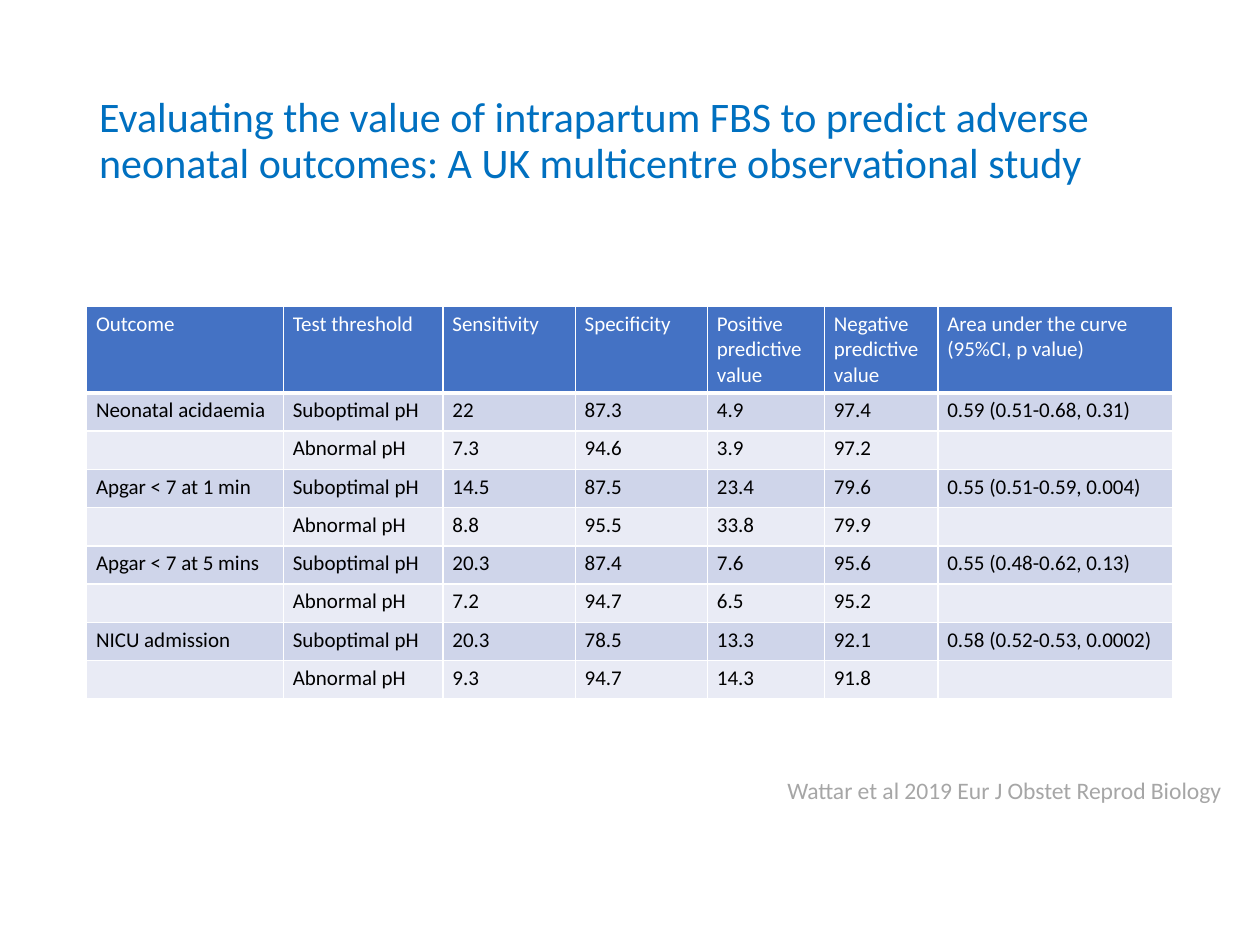
from lxml.etree import SubElement
from pptx import Presentation
from pptx.dml.color import RGBColor
from pptx.enum.text import MSO_ANCHOR, MSO_AUTO_SIZE
from pptx.oxml.ns import qn
from pptx.util import Pt

THEME = {
    "font": "Calibri",
    "title_size": 24, "table_size": 12, "citation_size": 13.5,
    "title": "0070C0", "citation": "A6A6A6",
    "header_text": "FFFFFF", "body_text": "000000",
    "header_fill": "4472C4", "band_fills": ("CFD5EA", "E9EBF5"),
    "border": "FFFFFF",
}

TITLE = ("Evaluating the value of intrapartum FBS to predict adverse "
         "neonatal outcomes: A UK multicentre observational study")
CITATION = "Wattar et al 2019 Eur J Obstet Reprod Biology"
COLUMNS = [
    ("Outcome", 112.5), ("Test threshold", 91.2), ("Sensitivity", 75.6),
    ("Specificity", 75.6), ("Positive predictive value", 66.8),
    ("Negative predictive value", 64.9),
    ("Area under the curve (95%CI, p value)", 134.2),
]
THRESHOLDS = ("Suboptimal pH", "Abnormal pH")
OUTCOMES = [
    ("Neonatal acidaemia", "0.59 (0.51-0.68, 0.31)",
     [("22", "87.3", "4.9", "97.4"), ("7.3", "94.6", "3.9", "97.2")]),
    ("Apgar < 7 at 1 min", "0.55 (0.51-0.59, 0.004)",
     [("14.5", "87.5", "23.4", "79.6"), ("8.8", "95.5", "33.8", "79.9")]),
    ("Apgar < 7 at 5 mins", "0.55 (0.48-0.62, 0.13)",
     [("20.3", "87.4", "7.6", "95.6"), ("7.2", "94.7", "6.5", "95.2")]),
    ("NICU admission", "0.58 (0.52-0.53, 0.0002)",
     [("20.3", "78.5", "13.3", "92.1"), ("9.3", "94.7", "14.3", "91.8")]),
]

LEFT, WIDTH = 49.5, 621
TABLE_TOP, HEADER_HEIGHT, ROW_HEIGHT = 175.2, 49, 21.87


def place(shape, left, top, width, height):
    shape.left, shape.top = Pt(left), Pt(top)
    shape.width, shape.height = Pt(width), Pt(height)


def write(paragraph, wording, size, colour):
    run = paragraph.add_run()
    run.text = wording
    run.font.name = THEME["font"]
    run.font.size = Pt(size)
    run.font.bold = False
    run.font.color.rgb = RGBColor.from_string(colour)


def draw_borders(cell, bottom_width):
    properties = cell._tc.get_or_add_tcPr()
    for side, width in (("L", 1), ("R", 1), ("T", 1), ("B", bottom_width)):
        line = SubElement(properties, qn(f"a:ln{side}"), w=str(Pt(width)))
        solid = SubElement(line, qn("a:solidFill"))
        SubElement(solid, qn("a:srgbClr"), val=THEME["border"])


def fill_cell(cell, wording, text_colour, fill_colour, bottom_width):
    cell.margin_left = cell.margin_right = Pt(5.4)
    cell.margin_top = cell.margin_bottom = Pt(2.7)
    draw_borders(cell, bottom_width)
    cell.fill.solid()
    cell.fill.fore_color.rgb = RGBColor.from_string(fill_colour)
    paragraph = cell.text_frame.paragraphs[0]
    if wording:
        write(paragraph, wording, THEME["table_size"], text_colour)
    else:
        SubElement(paragraph._p, qn("a:endParaRPr"),
                   sz=str(THEME["table_size"] * 100))


def table_rows():
    yield [heading for heading, _ in COLUMNS]
    for outcome, area, results in OUTCOMES:
        for index, (threshold, values) in enumerate(zip(THRESHOLDS, results)):
            first = index == 0
            yield [outcome if first else "", threshold, *values,
                   area if first else ""]


def add_title(slide):
    title = slide.shapes.title
    place(title, LEFT, 28.8, WIDTH, 104.4)
    frame = title.text_frame
    frame.word_wrap = True
    frame.auto_size = MSO_AUTO_SIZE.NONE
    frame.vertical_anchor = MSO_ANCHOR.MIDDLE
    paragraph = frame.paragraphs[0]
    paragraph.alignment = 1
    paragraph.line_spacing = 0.9
    write(paragraph, TITLE, THEME["title_size"], THEME["title"])


def add_results(slide):
    rows = list(table_rows())
    height = HEADER_HEIGHT + ROW_HEIGHT * (len(rows) - 1)
    table = slide.shapes.add_table(len(rows), len(COLUMNS), Pt(LEFT),
                                   Pt(TABLE_TOP), Pt(WIDTH), Pt(height)).table
    for column, (_, width) in zip(table.columns, COLUMNS):
        column.width = Pt(width)
    for r, wordings in enumerate(rows):
        header = r == 0
        table.rows[r].height = Pt(HEADER_HEIGHT if header else ROW_HEIGHT)
        text_colour = THEME["header_text" if header else "body_text"]
        fill_colour = (THEME["header_fill"] if header
                       else THEME["band_fills"][(r - 1) % 2])
        for c, wording in enumerate(wordings):
            fill_cell(table.cell(r, c), wording, text_colour, fill_colour,
                      3 if header else 1)


def add_citation(slide):
    citation = slide.shapes.add_textbox(Pt(442.8), Pt(439.9), Pt(266.4), Pt(23.8))
    frame = citation.text_frame
    frame.word_wrap = False
    frame.auto_size = MSO_AUTO_SIZE.SHAPE_TO_FIT_TEXT
    write(frame.paragraphs[0], CITATION, THEME["citation_size"],
          THEME["citation"])


def main():
    presentation = Presentation()
    presentation.slide_width, presentation.slide_height = Pt(720), Pt(540)
    slide = presentation.slides.add_slide(presentation.slide_layouts[5])
    add_title(slide)
    add_results(slide)
    add_citation(slide)
    presentation.save("out.pptx")


if __name__ == "__main__":
    main()
